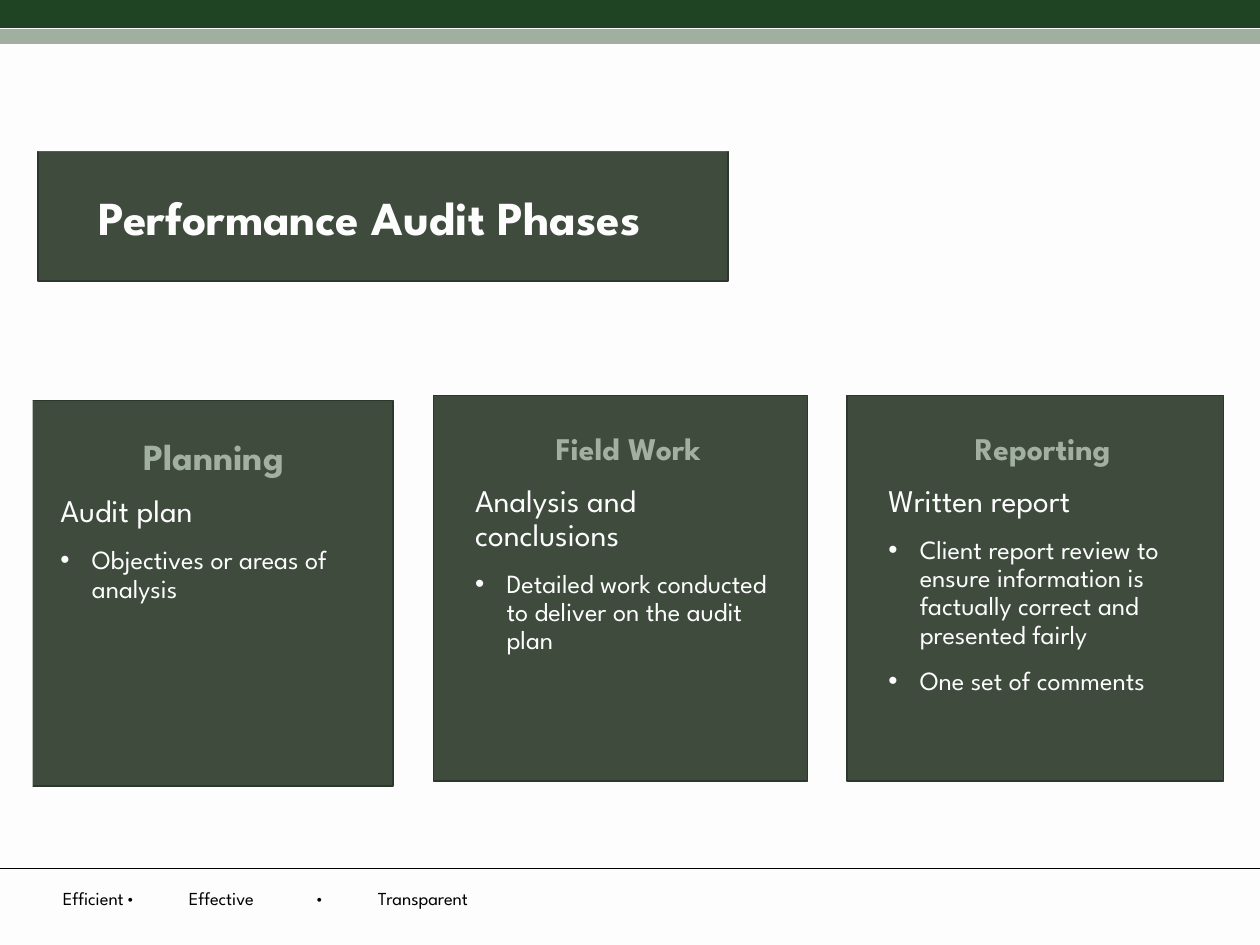
import pptx
import pptx.util
import pptx.dml.color
import pptx.enum.shapes
import pptx.enum.text
import pptx.oxml.ns
import lxml.etree

COLS, ROWS = 100, 75
FONT = "League Spartan"
GREEN, EDGE, SAGE, PAPER = "3E4B3D", "2E372D", "A2B0A0", "FDFDFD"
ALIGN = pptx.enum.text.PP_ALIGN
ANCHOR = pptx.enum.text.MSO_ANCHOR
CARDS = [
    ((34.4, 31.4, 29.7, 30.6), "Field Work", 18, "Analysis and conclusions",
     ["Detailed work conducted to deliver on the audit plan"]),
    ((67.2, 31.4, 29.9, 30.6), "Reporting", 18, "Written report",
     ["Client report review to ensure information is factually correct and presented fairly",
      "One set of comments"]),
    ((1.5, 31.8, 29.7, 30.6), "Planning", 21, "Audit plan",
     ["Objectives or areas of analysis"]),
]


def grid(*cells):
    """Turn grid columns and rows into slide lengths."""
    return [pptx.util.Inches(c / 10) for c in cells]


def rgb(value):
    """Return the colour for a hex string."""
    return pptx.dml.color.RGBColor.from_string(value)


def sub(parent, tag, **attrs):
    """Append a DrawingML element with the given attributes."""
    el = lxml.etree.SubElement(parent, pptx.oxml.ns.qn(tag))
    for name, value in attrs.items():
        el.set(name, str(value))
    return el


def place(sp, box):
    """Move and size a shape to a grid box."""
    sp.left, sp.top, sp.width, sp.height = grid(*box)


def setup_frame(sp, anchor, x=0.1, y=0.05):
    """Set wrapping, anchor and insets, and return the text frame."""
    tf = sp.text_frame
    tf.word_wrap = True
    tf.auto_size = pptx.enum.text.MSO_AUTO_SIZE.NONE
    tf.vertical_anchor = anchor
    tf.margin_left = tf.margin_right = pptx.util.Inches(x)
    tf.margin_top = tf.margin_bottom = pptx.util.Inches(y)
    return tf


def write(p, text, size=18, color=PAPER, bold=False, align=ALIGN.LEFT,
          spacing=0.9, before=0, bullet=False):
    """Fill a paragraph with one formatted run."""
    p.alignment, p.line_spacing = align, spacing
    p.space_before, p.space_after = pptx.util.Pt(before), pptx.util.Pt(0)
    pPr = p._p.get_or_add_pPr()
    indent = pptx.util.Inches(0.25) if bullet else 0
    pPr.set("marL", str(indent))
    pPr.set("indent", str(-indent))
    if bullet:
        sub(pPr, "a:buFont", typeface="Arial")
        sub(pPr, "a:buChar", char="•")
    else:
        sub(pPr, "a:buNone")
    r = p.add_run()
    r.text = text
    r.font.name, r.font.size, r.font.bold = FONT, pptx.util.Pt(size), bold
    r.font.color.rgb = rgb(color)


def add_panel(slide, box):
    """Draw a dark green panel with a thin edge."""
    sp = slide.shapes.add_shape(pptx.enum.shapes.MSO_SHAPE.RECTANGLE, *grid(*box))
    sp.shadow.inherit = False
    sp.fill.solid()
    sp.fill.fore_color.rgb = rgb(GREEN)
    sp.line.color.rgb = rgb(EDGE)
    sp.line.width = pptx.util.Pt(1)


def add_rule(slide, row, color, width):
    """Draw a line across the slide at a grid row."""
    line = slide.shapes.add_connector(
        pptx.enum.shapes.MSO_CONNECTOR.STRAIGHT, *grid(0, row, COLS, row))
    line.line.color.rgb = rgb(color)
    line.line.width = pptx.util.Pt(width)
    sub(line._element.spPr, "a:effectLst")


def add_title(slide, box, text):
    """Place the title placeholder on its panel."""
    x, y, w, h = box
    add_panel(slide, box)
    sp = slide.shapes.title
    slide.shapes._spTree.append(sp._element)
    place(sp, (x, y + 2.1, w - 2.1, h - 1.5))
    tf = setup_frame(sp, ANCHOR.MIDDLE)
    write(tf.paragraphs[0], text, size=27, bold=True, align=ALIGN.CENTER)


def add_card(slide, sp, box, heading, size, lead, items):
    """Place a body placeholder on a panel with heading, lead and bullets."""
    x, y, w, h = box
    add_panel(slide, box)
    slide.shapes._spTree.append(sp._element)
    place(sp, (x + 2.6, y + 2.6, w - 4, h - 1.4))
    tf = setup_frame(sp, ANCHOR.TOP, 0.07, 0.04)
    write(tf.paragraphs[0], heading, size=size, color=SAGE, bold=True,
          align=ALIGN.CENTER, before=10)
    write(tf.add_paragraph(), lead, before=10)
    for item in items:
        write(tf.add_paragraph(), item, size=15, before=10, bullet=True)


def add_footer(slide, box, words, stops):
    """Write the motto with each word centred on its own tab stop."""
    sp = slide.shapes.add_textbox(*grid(*box))
    tf = setup_frame(sp, ANCHOR.TOP, 0)
    p = tf.paragraphs[0]
    write(p, "\t" + "\t•\t".join(words), size=10.5, color="000000", spacing=1.0)
    tabs = sub(p._p.pPr, "a:tabLst")
    for stop in grid(*stops):
        sub(tabs, "a:tab", pos=stop, algn="ctr")


def add_frame(slide, box, left, top, right, bottom):
    """Mask the margins of a box, leaving an open window inside."""
    x, y, w, h = box
    x1, y1, x2, y2 = grid(x + left, y + top, x + w - right, y + h - bottom)
    ox1, oy1, ox2, oy2 = grid(x, y, x + w, y + h)
    fb = slide.shapes.build_freeform(x1, y1)
    fb.add_line_segments([(x1, y2), (x2, y2), (x2, y1)], close=True)
    fb.move_to(ox1, oy1)
    fb.add_line_segments([(ox2, oy1), (ox2, oy2), (ox1, oy2)], close=True)
    sp = fb.convert_to_shape()
    sp.shadow.inherit = False
    sp.fill.solid()
    sp.fill.fore_color.rgb = rgb(PAPER)
    sp.line.fill.background()


def main():
    """Build the audit phases slide."""
    prs = pptx.Presentation()
    prs.slide_width, prs.slide_height = grid(COLS, ROWS)
    slide = prs.slides.add_slide(prs.slide_layouts.get_by_name("Comparison"))
    slide.background.fill.solid()
    slide.background.fill.fore_color.rgb = rgb(PAPER)
    bodies = [sp for sp in slide.placeholders if sp.placeholder_format.idx > 0]

    add_footer(slide, (0, 69.9, COLS, 2.8), ["Efficient", "Effective", "Transparent"],
               [38.1, 43.3, 48.8, 54.3, 60.8])
    for row, color, width in [(1, "1F4423", 18), (2.9, "A0AFA0", 9), (68.9, "000000", 0.5)]:
        add_rule(slide, row, color, width)
    add_title(slide, (3, 9.9, 54.8, 12.4), "Performance Audit Phases")
    for sp, card in zip(bodies, CARDS):
        add_card(slide, sp, *card)
    for sp in bodies[len(CARDS):]:
        sp._element.getparent().remove(sp._element)
    add_frame(slide, (0, 9.4, COLS, 56.2), 2.6, 2.6, 2.6, 2.6)
    prs.save("out.pptx")


if __name__ == "__main__":
    main()
